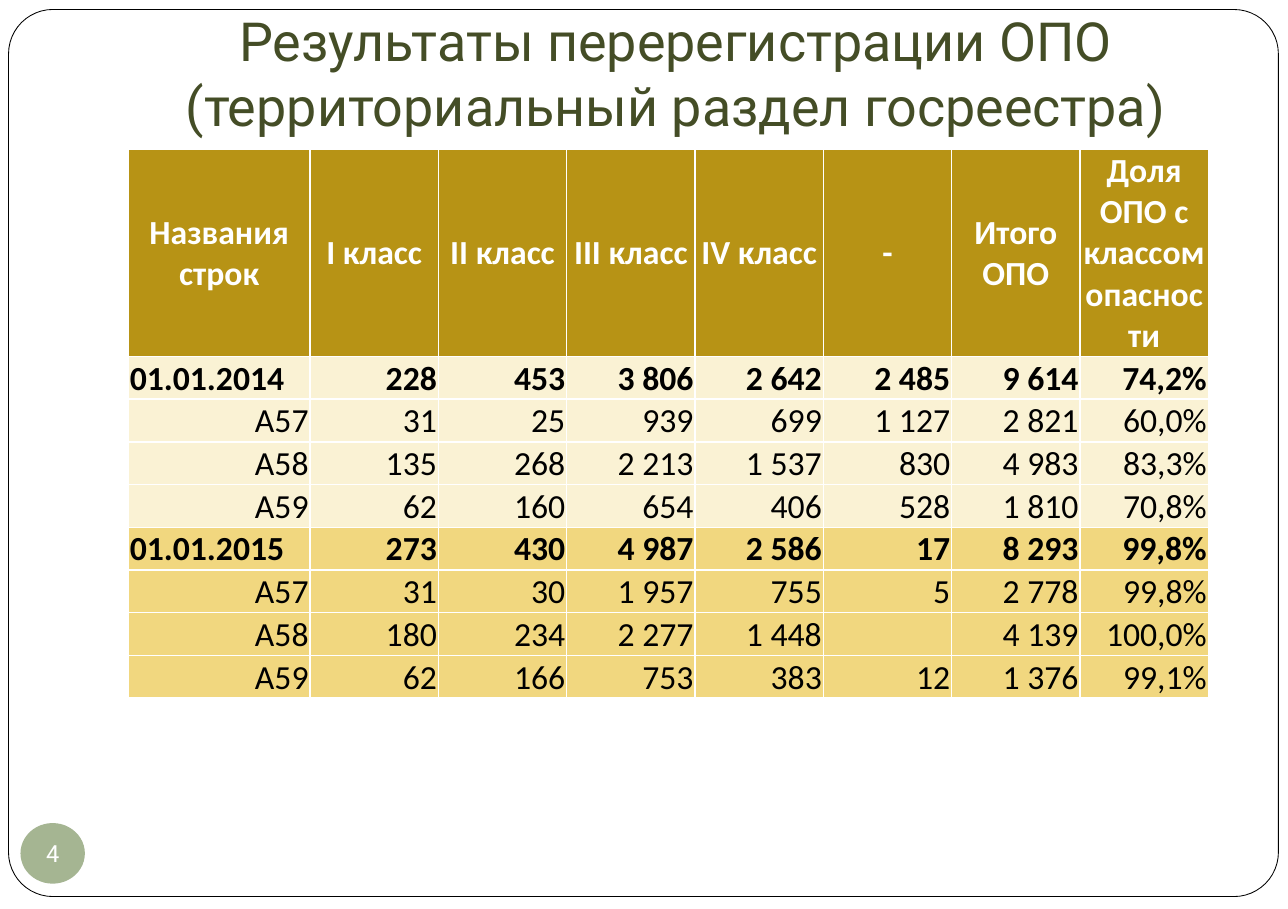
from lxml import etree
from pptx import Presentation
from pptx.dml.color import RGBColor
from pptx.enum.shapes import MSO_SHAPE
from pptx.enum.text import MSO_ANCHOR, MSO_AUTO_SIZE, PP_ALIGN
from pptx.oxml.ns import qn
from pptx.util import Cm, Pt

ROUNDED, OVAL = MSO_SHAPE.ROUNDED_RECTANGLE, MSO_SHAPE.OVAL
MIDDLE, BOTTOM = MSO_ANCHOR.MIDDLE, MSO_ANCHOR.BOTTOM
LEFT, CENTER, RIGHT = PP_ALIGN.LEFT, PP_ALIGN.CENTER, PP_ALIGN.RIGHT
NO_AUTOFIT = MSO_AUTO_SIZE.NONE

WHITE, BLACK = "FFFFFF", "000000"
OLIVE, SAGE = "444D26", "A5B592"
GOLD, CREAM, SAND = "B79315", "FAF2D4", "F1D77F"

HEADERS = ["Названия строк", "I класс", "II класс", "III класс", "IV класс",
           "-", "Итого ОПО", "Доля ОПО с классом опасности"]
YEARS = [
    (CREAM, [
        ["01.01.2014", "228", "453", "3 806", "2 642", "2 485", "9 614", "74,2%"],
        ["А57", "31", "25", "939", "699", "1 127", "2 821", "60,0%"],
        ["А58", "135", "268", "2 213", "1 537", "830", "4 983", "83,3%"],
        ["А59", "62", "160", "654", "406", "528", "1 810", "70,8%"],
    ]),
    (SAND, [
        ["01.01.2015", "273", "430", "4 987", "2 586", "17", "8 293", "99,8%"],
        ["А57", "31", "30", "1 957", "755", "5", "2 778", "99,8%"],
        ["А58", "180", "234", "2 277", "1 448", "", "4 139", "100,0%"],
        ["А59", "62", "166", "753", "383", "12", "1 376", "99,1%"],
    ]),
]


def rgb(color):
    return RGBColor.from_string(color)


def write(tf, text, size=20, font="Calibri", color=BLACK, bold=False, align=CENTER):
    p = tf.paragraphs[0]
    p.alignment = align
    if text:
        r = p.add_run()
        r.text = text
        r.font.size = Pt(size)
        r.font.name = font
        r.font.bold = bold
        r.font.color.rgb = rgb(color)


def set_margins(box, left, top, right, bottom):
    box.margin_left, box.margin_top = Cm(left), Cm(top)
    box.margin_right, box.margin_bottom = Cm(right), Cm(bottom)


def add_panel(s, kind, left, top, width, height, fill, line=None):
    sp = s.shapes.add_shape(kind, Cm(left), Cm(top), Cm(width), Cm(height))
    sp.shadow.inherit = False
    sp.fill.solid()
    sp.fill.fore_color.rgb = rgb(fill)
    if line:
        sp.line.color.rgb = rgb(line)
        sp.line.width = Pt(0.5)
    else:
        sp.line.fill.background()
    return sp


def set_title(s, text):
    title = s.shapes.title
    title.left, title.top = Cm(2.69), Cm(0.76)
    title.width, title.height = Cm(22.96), Cm(2.36)
    tf = title.text_frame
    tf.word_wrap = True
    tf.auto_size = NO_AUTOFIT
    tf.vertical_anchor = BOTTOM
    set_margins(tf, 0.25, 0.13, 0.25, 0.25)
    write(tf, text, size=32, font="Roboto", color=OLIVE)
    return title


def add_page_number(s, text):
    sp = add_panel(s, OVAL, 0.43, 17.25, 1.35, 1.27, SAGE)
    tf = sp.text_frame
    tf.word_wrap = False
    tf.vertical_anchor = MIDDLE
    set_margins(tf, 0, 0, 0, 0)
    write(tf, text, size=14, font="Roboto", color=WHITE)


def set_borders(cell, color):
    tcPr = cell._tc.get_or_add_tcPr()
    for i, side in enumerate(("a:lnL", "a:lnR", "a:lnT", "a:lnB")):
        ln = etree.Element(qn(side), w=str(Pt(1)))
        fill = etree.SubElement(ln, qn("a:solidFill"))
        etree.SubElement(fill, qn("a:srgbClr"), val=color)
        tcPr.insert(i, ln)


def fill_cell(cell, text, fill, anchor=BOTTOM, indent=0.03, **style):
    cell.fill.solid()
    cell.fill.fore_color.rgb = rgb(fill)
    set_borders(cell, WHITE)
    cell.vertical_anchor = anchor
    set_margins(cell, indent, 0.03, 0.03, 0)
    write(cell.text_frame, text, **style)


def add_results_table(s):
    rows = [(fill, i == 0, row) for fill, block in YEARS for i, row in enumerate(block)]
    widths = [3.81] + [2.69] * (len(HEADERS) - 1)
    heights = [3.2] + [0.79] * len(rows)
    table = s.shapes.add_table(len(heights), len(widths), Cm(2.69), Cm(3.12),
                               Cm(sum(widths)), Cm(sum(heights))).table
    table.horz_banding = False
    for column, width in zip(table.columns, widths):
        column.width = Cm(width)
    for row, height in zip(table.rows, heights):
        row.height = Cm(height)
    for c, text in enumerate(HEADERS):
        fill_cell(table.cell(0, c), text, GOLD, anchor=MIDDLE, color=WHITE, bold=True)
    for r, (fill, total, values) in enumerate(rows, 1):
        for c, text in enumerate(values):
            fill_cell(table.cell(r, c), text, fill, bold=total,
                      indent=0.23 if c == 0 and not total else 0.03,
                      align=LEFT if c == 0 and total else RIGHT)


def main():
    prs = Presentation()
    prs.slide_width, prs.slide_height = Cm(27), Cm(19.05)
    s = prs.slides.add_slide(prs.slide_layouts[5])
    title = set_title(s, "Результаты перерегистрации ОПО (территориальный раздел госреестра)")
    frame = add_panel(s, ROUNDED, 0.18, 0.2, 26.62, 18.59, WHITE, line=BLACK)
    frame.adjustments[0] = 0.05
    title._element.addprevious(frame._element)
    add_page_number(s, "4")
    add_results_table(s)
    prs.save("out.pptx")


if __name__ == "__main__":
    main()
